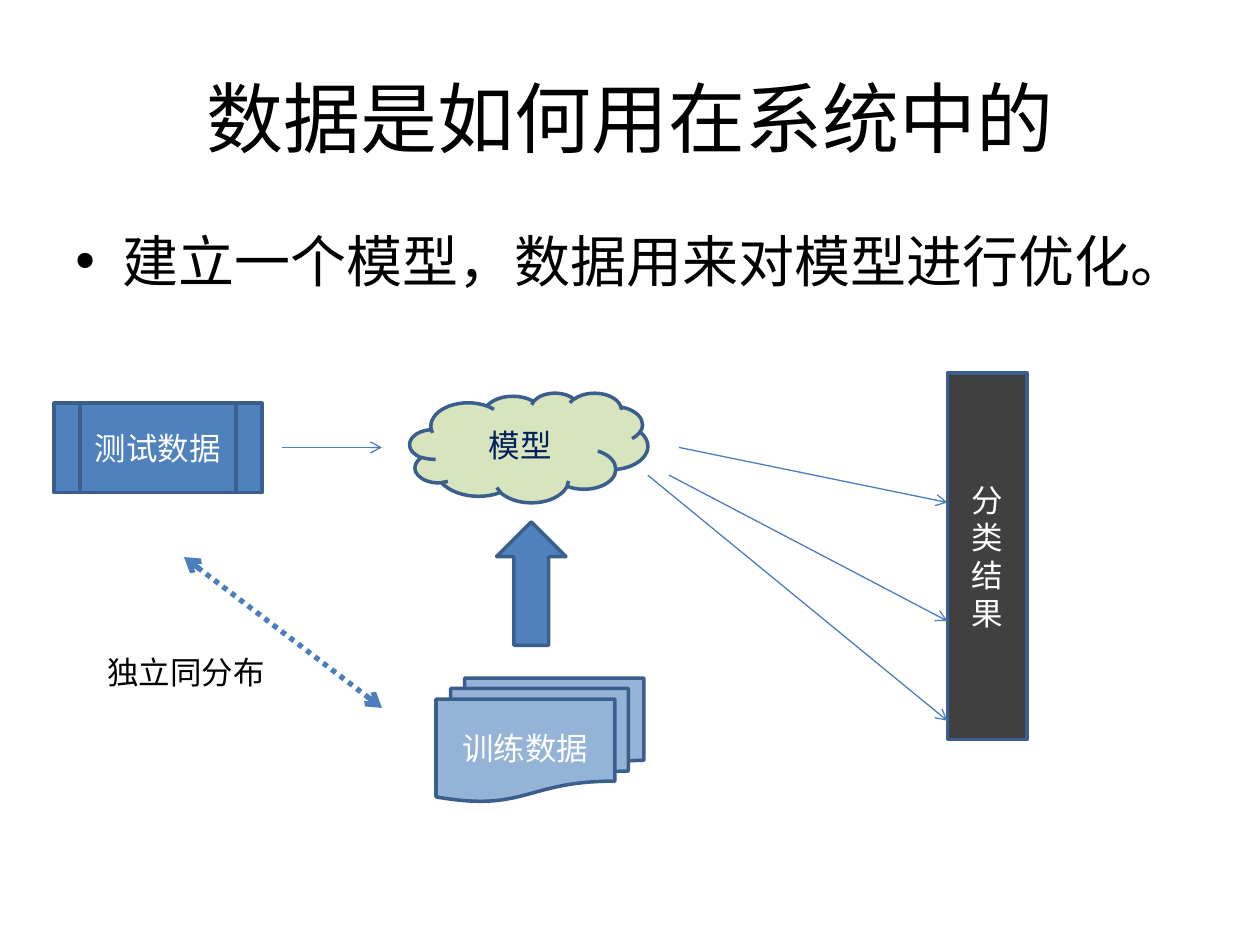
from dataclasses import dataclass
from lxml.etree import SubElement
from pptx import Presentation
from pptx.dml.color import RGBColor
from pptx.enum.dml import MSO_LINE
from pptx.enum.shapes import MSO_CONNECTOR, MSO_SHAPE
from pptx.enum.text import MSO_ANCHOR, PP_ALIGN
from pptx.oxml.ns import qn
from pptx.util import Cm, Pt


@dataclass(frozen=True)
class Theme:
    font: str = "Calibri"
    title_size: float = 44
    body_size: float = 32
    label_size: float = 18
    outline_width: float = 2
    arrow_width: float = 0.75
    link_width: float = 3
    black: str = "000000"
    white: str = "FFFFFF"
    navy: str = "002060"
    blue: str = "4F81BD"
    light_blue: str = "95B3D7"
    green: str = "D7E4BD"
    charcoal: str = "404040"
    outline: str = "3A5F8C"
    arrow: str = "4B7EBC"


class Deck:
    def __init__(self, theme):
        self.theme = theme
        self.prs = Presentation()
        self.prs.slide_width, self.prs.slide_height = Cm(25.4), Cm(19.05)
        self.s = self.prs.slides.add_slide(self.prs.slide_layouts[5])

    def set_text(self, tf, text, size, color, align=PP_ALIGN.CENTER, anchor=MSO_ANCHOR.MIDDLE):
        tf.text = text
        tf.word_wrap = True
        tf.vertical_anchor = anchor
        for p in tf.paragraphs:
            p.alignment = align
            for r in p.runs:
                r.font.name = self.theme.font
                r.font.size = Pt(size)
                r.font.color.rgb = RGBColor.from_string(color)

    def title(self, text, *box):
        sp = self.s.shapes.title
        sp.left, sp.top, sp.width, sp.height = map(Cm, box)
        self.set_text(sp.text_frame, text, self.theme.title_size, self.theme.black)

    def text(self, text, *box, size):
        tf = self.s.shapes.add_textbox(*map(Cm, box)).text_frame
        self.set_text(tf, text, size, self.theme.black, PP_ALIGN.LEFT, MSO_ANCHOR.TOP)
        return tf

    def bullet(self, text, *box):
        size = self.theme.body_size
        p = self.text(text, *box, size=size).paragraphs[0]
        p.space_before = Pt(size * 0.2)
        pPr = p._p.get_or_add_pPr()
        indent = Cm(0.95)
        pPr.set("marL", str(indent))
        pPr.set("indent", str(-indent))
        SubElement(pPr, qn("a:buFont"), typeface="Arial")
        SubElement(pPr, qn("a:buChar"), char="•")

    def shape(self, kind, *box, fill, text="", color=None):
        sp = self.s.shapes.add_shape(kind, *map(Cm, box))
        sp.shadow.inherit = False
        sp.fill.solid()
        sp.fill.fore_color.rgb = RGBColor.from_string(fill)
        sp.line.color.rgb = RGBColor.from_string(self.theme.outline)
        sp.line.width = Pt(self.theme.outline_width)
        if text:
            self.set_text(sp.text_frame, text, self.theme.label_size, color or self.theme.white)

    def arrow(self, *ends, width=None, dash=None, heads=("tailEnd",)):
        cxn = self.s.shapes.add_connector(MSO_CONNECTOR.STRAIGHT, *map(Cm, ends))
        cxn.line.color.rgb = RGBColor.from_string(self.theme.arrow)
        cxn.line.width = Pt(width or self.theme.arrow_width)
        if dash:
            cxn.line.dash_style = dash
        ln = cxn.line._get_or_add_ln()
        for head in heads:
            SubElement(ln, qn(f"a:{head}"), type="arrow")
        SubElement(cxn._element.spPr, qn("a:effectLst"))


def main():
    t = Theme()
    d = Deck(t)
    d.title("数据是如何用在系统中的", 1.27, 0.76, 22.86, 3.18)
    d.bullet("建立一个模型，数据用来对模型进行优化。", 1.27, 4.45, 22.86, 2.49)

    d.shape(MSO_SHAPE.CLOUD, 8.26, 7.92, 4.8, 2.21, fill=t.green, text="模型", color=t.navy)
    d.shape(MSO_SHAPE.FLOWCHART_MULTIDOCUMENT, 8.79, 13.67, 4.19, 2.49,
            fill=t.light_blue, text="训练数据")
    result_left, flow_y = 19.1, 9.02
    d.shape(MSO_SHAPE.RECTANGLE, result_left, 7.52, 1.6, 7.39,
            fill=t.charcoal, text="\n".join("分类结果"))
    for x, y, result_y in ((13.69, flow_y, 10.13), (13.49, 9.58, 12.52), (13.06, 9.58, 14.53)):
        d.arrow(x, y, result_left, result_y)

    d.shape(MSO_SHAPE.FLOWCHART_PREDEFINED_PROCESS, 1.09, 8.13, 4.19, 1.8,
            fill=t.blue, text="测试数据")
    d.arrow(5.69, flow_y, 7.7, flow_y)
    d.shape(MSO_SHAPE.UP_ARROW, 10.01, 10.52, 1.4, 2.49, fill=t.blue)
    d.arrow(3.71, 11.23, 7.7, 14.27, width=t.link_width, dash=MSO_LINE.ROUND_DOT,
            heads=("headEnd", "tailEnd"))
    d.text("独立同分布", 1.91, 13.03, 4.8, 1.02, size=t.label_size)
    d.prs.save("out.pptx")


if __name__ == "__main__":
    main()
